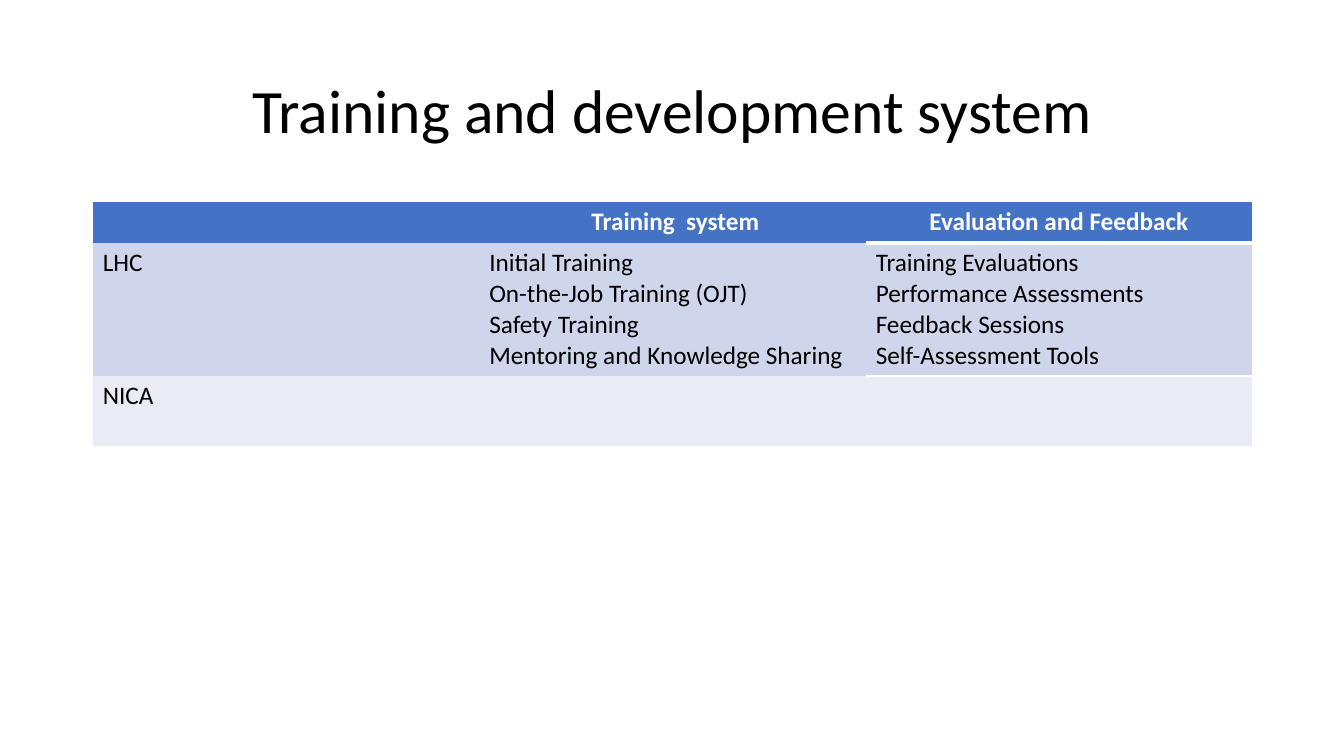
from dataclasses import dataclass

from lxml.etree import SubElement
from pptx import Presentation
from pptx.dml.color import RGBColor
from pptx.enum.text import MSO_ANCHOR, PP_ALIGN
from pptx.oxml.ns import qn
from pptx.text.text import _Paragraph
from pptx.util import Inches, Pt

BLACK = RGBColor(0x00, 0x00, 0x00)
WHITE = RGBColor(0xFF, 0xFF, 0xFF)
HEADER_BLUE = RGBColor(0x44, 0x72, 0xC4)
BAND_DARK = RGBColor(0xCF, 0xD5, 0xEA)
BAND_LIGHT = RGBColor(0xE9, 0xEB, 0xF5)
PLAIN_TABLE_STYLE = "{2D5ABB26-0587-4C30-8999-92F81FD0307C}"

TITLE_FORMAT = {"name": "Calibri", "size": Pt(44), "bold": False}
HEADER_FORMAT = {"name": "Calibri", "size": Pt(18), "bold": True}
BODY_FORMAT = {"name": "Calibri", "size": Pt(18), "bold": False}


@dataclass
class TableRow:
    height: float
    fill: RGBColor
    color: RGBColor
    font_format: dict
    align: PP_ALIGN
    bottom_line: int
    cells: list[str]


ROWS = [
    TableRow(0.41, HEADER_BLUE, WHITE, HEADER_FORMAT, PP_ALIGN.CENTER, 3,
             ["", " Training  system", "Evaluation and Feedback"]),
    TableRow(1.32, BAND_DARK, BLACK, BODY_FORMAT, PP_ALIGN.LEFT, 1,
             ["LHC",
              "Initial Training\nOn-the-Job Training (OJT)\nSafety Training\n"
              "Mentoring and Knowledge Sharing",
              "Training Evaluations\nPerformance Assessments\n"
              "Feedback Sessions\nSelf-Assessment Tools"]),
    TableRow(0.7, BAND_LIGHT, BLACK, BODY_FORMAT, PP_ALIGN.LEFT, 1,
             ["NICA", "", ""]),
]


def format_paragraph(para: _Paragraph, font_format: dict, color: RGBColor,
                     align: PP_ALIGN) -> None:
    para.alignment = align
    for name, value in font_format.items():
        setattr(para.font, name, value)
    para.font.color.rgb = color


def add_borders(cell, widths: dict[str, int]) -> None:
    """Add white borders ahead of the cell fill, as the schema requires."""
    properties = cell._tc.get_or_add_tcPr()
    for index, (side, width) in enumerate(widths.items()):
        line = SubElement(properties, qn(f"a:{side}"), w=str(Pt(width)))
        fill = SubElement(line, qn("a:solidFill"))
        SubElement(fill, qn("a:srgbClr"), val=str(WHITE))
        properties.insert(index, line)


def add_title(page, text: str) -> None:
    box = page.shapes.add_textbox(Inches(0.75), Inches(0.4),
                                  Inches(11.84), Inches(1.45))
    frame = box.text_frame
    frame.word_wrap = True
    frame.vertical_anchor = MSO_ANCHOR.MIDDLE
    para = frame.paragraphs[0]
    para.text = text
    para.line_spacing = 0.9
    format_paragraph(para, TITLE_FORMAT, BLACK, PP_ALIGN.CENTER)


def add_training_table(page, rows: list[TableRow]) -> None:
    height = sum(row.height for row in rows)
    frame = page.shapes.add_table(len(rows), 3, Inches(0.92), Inches(2),
                                  Inches(11.5), Inches(height))
    table = frame.table
    table._tbl.tblPr.find(qn("a:tableStyleId")).text = PLAIN_TABLE_STYLE
    for row_index, row in enumerate(rows):
        table.rows[row_index].height = Inches(row.height)
        for column, text in enumerate(row.cells):
            cell = table.cell(row_index, column)
            cell.text = text
            cell.fill.solid()
            cell.fill.fore_color.rgb = row.fill
            for para in cell.text_frame.paragraphs:
                format_paragraph(para, row.font_format, row.color, row.align)
        # Only the last column is outlined
        add_borders(cell, {"lnR": 1, "lnT": 1, "lnB": row.bottom_line})


def main() -> None:
    deck = Presentation()
    deck.slide_width, deck.slide_height = Inches(13.33), Inches(7.5)
    page = deck.slides.add_slide(deck.slide_layouts[6])
    add_title(page, "Training and development system")
    add_training_table(page, ROWS)
    deck.save("out.pptx")


if __name__ == "__main__":
    main()
